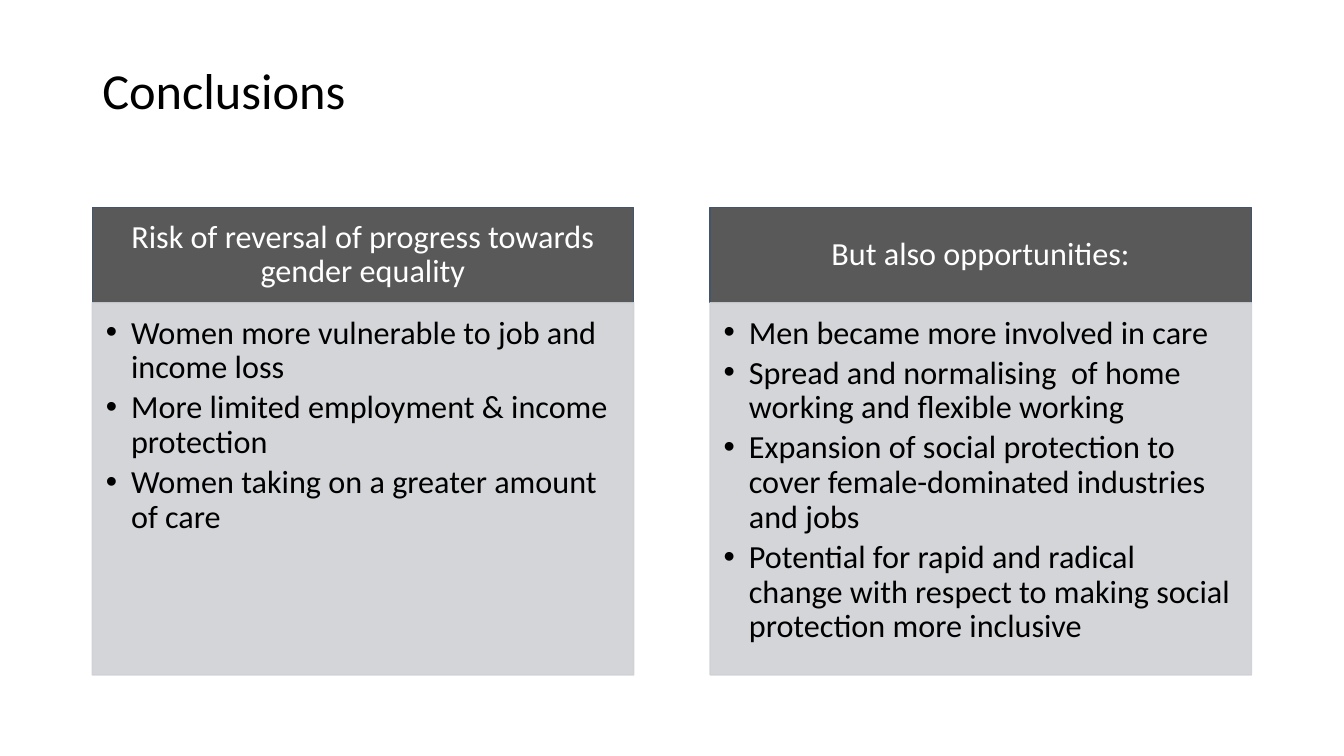
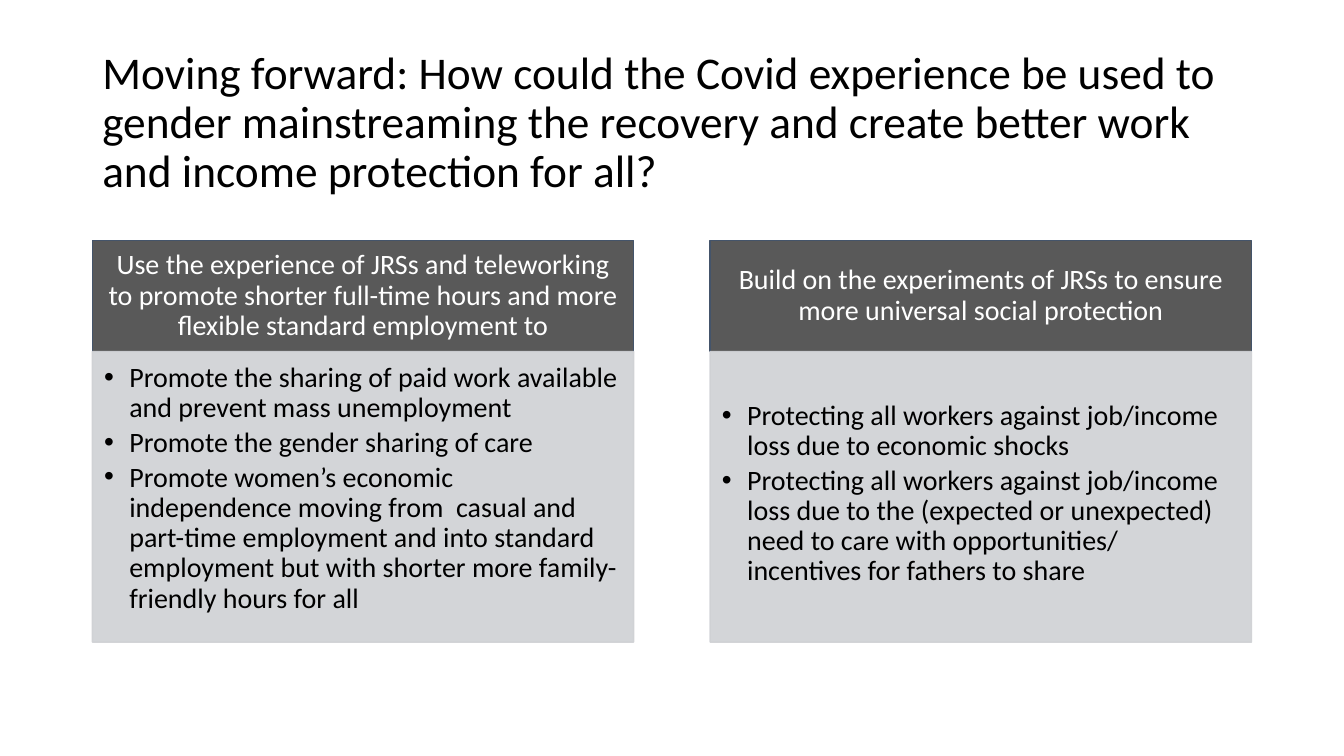
from lxml import etree
from pptx import Presentation
from pptx.dml.color import RGBColor
from pptx.enum.shapes import MSO_SHAPE
from pptx.enum.text import MSO_ANCHOR, PP_ALIGN
from pptx.oxml.ns import qn
from pptx.util import Inches, Pt

RECT = MSO_SHAPE.RECTANGLE
TOP, MIDDLE = MSO_ANCHOR.TOP, MSO_ANCHOR.MIDDLE
LEFT, CENTER = PP_ALIGN.LEFT, PP_ALIGN.CENTER

FONT = "Calibri"
COLORS = {"text": "000000", "header": "595959", "header_line": "44546A",
          "header_text": "FFFFFF", "body": "CFD1D4"}

# Grid of 160 columns by 90 rows, each cell a twelfth of an inch.
CELL = Inches(1) // 12
COLS, ROWS = 160, 90
MARGIN, CONTENT_COLS, PANEL_GAP = 11, 138, 9.1
TITLE_TOP, TITLE_ROWS = 7.3, 14.9

SLIDES = [
    {
        "title": "Conclusions", "title_size": 36, "title_anchor": TOP,
        "size": 23, "top": 24.7, "header_rows": 11.35, "body_rows": 44.3,
        "panels": [
            ("Risk of reversal of progress towards gender equality", 0, [
                "Women more vulnerable to job and income loss",
                "More limited employment & income protection",
                "Women taking on a greater amount of care",
            ]),
            ("But also opportunities:", 0, [
                "Men became more involved in care",
                "Spread and normalising  of home working and flexible working",
                "Expansion of social protection to cover female-dominated "
                "industries and jobs",
                "Potential for rapid and radical change with respect to making "
                "social protection more inclusive",
            ]),
        ],
    },
    {
        "title": "Moving forward: How could the Covid experience be used to "
                 "gender mainstreaming the recovery and create better work and "
                 "income protection for all?",
        "title_size": 32.4, "title_anchor": MIDDLE,
        "size": 20, "top": 28.6, "header_rows": 13.25, "body_rows": 34.6,
        "panels": [
            ("Use the experience of JRSs and teleworking to promote shorter "
             "full-time hours and more flexible standard employment to", 0, [
                 "Promote the sharing of paid work available and prevent mass "
                 "unemployment",
                 "Promote the gender sharing of care",
                 "Promote women’s economic independence moving from  casual and "
                 "part-time employment and into standard employment but with "
                 "shorter more family-friendly hours for all",
             ]),
            ("Build on the experiments of JRSs to ensure more universal social "
             "protection", 1.35, [
                 "Protecting all workers against job/income loss due to "
                 "economic shocks",
                 "Protecting all workers against job/income loss due to the "
                 "(expected or unexpected) need to care with opportunities/ "
                 "incentives for fathers to share",
             ]),
        ],
    },
]


class Deck:
    """Holds the presentation, its style and the slide being built."""

    def __init__(self):
        self.prs = Presentation()
        self.prs.slide_width = COLS * CELL
        self.prs.slide_height = ROWS * CELL
        self.slide = None

    def new_slide(self):
        self.slide = self.prs.slides.add_slide(self.prs.slide_layouts[6])

    def place(self, *cells):
        return [int(n * CELL) for n in cells]

    def set_text(self, s, lines, size, color, align=LEFT, anchor=TOP,
                 insets=None):
        """Fill s with one paragraph a line; insets are in ems, from the left."""
        tf = s.text_frame
        tf.word_wrap = True
        tf.vertical_anchor = anchor
        if insets:
            (tf.margin_left, tf.margin_top,
             tf.margin_right, tf.margin_bottom) = [Pt(size * n) for n in insets]
        tf.text = "\n".join(lines)
        for p in tf.paragraphs:
            p.alignment = align
            p.line_spacing = 0.9
            for r in p.runs:
                r.font.name = FONT
                r.font.size = Pt(size)
                r.font.color.rgb = RGBColor.from_string(COLORS[color])
        return tf

    def title(self, text, size, anchor):
        s = self.slide.shapes.add_textbox(
            *self.place(MARGIN, TITLE_TOP, CONTENT_COLS, TITLE_ROWS))
        self.set_text(s, [text], size, "text", anchor=anchor)

    def box(self, at, fill, line, opacity=100):
        s = self.slide.shapes.add_shape(RECT, *self.place(*at))
        s.shadow.inherit = False
        s.line.width = Pt(1)
        s.fill.solid()
        s.fill.fore_color.rgb = RGBColor.from_string(COLORS[fill])
        s.line.color.rgb = RGBColor.from_string(COLORS[line])
        if opacity < 100:
            for clr in s._element.spPr.iter(qn("a:srgbClr")):
                etree.SubElement(clr, qn("a:alpha"), val=str(opacity * 1000))
        return s

    def header(self, at, text, size):
        s = self.box(at, "header", "header_line")
        self.set_text(s, [text], size, "header_text", CENTER, MIDDLE,
                      (0.56, 0.31, 0.56, 0.31))

    def bullets(self, at, items, size, drop):
        """Bulleted body; drop lowers the list by that many ems."""
        s = self.box(at, "body", "body", opacity=90)
        tf = self.set_text(s, items, size, "text",
                           insets=(0.42, 0.42 + drop, 0.56, 0.63))
        for p in tf.paragraphs:
            p.space_after = Pt(round(size * 0.16, 1))
            pPr = p._p.get_or_add_pPr()
            pPr.set("marL", str(Inches(0.25)))
            pPr.set("indent", str(-Inches(0.25)))
            etree.SubElement(pPr, qn("a:buFont"), typeface="Arial")
            etree.SubElement(pPr, qn("a:buChar"), char="•")

    def panels(self, panels, size, top, header_rows, body_rows):
        """Equal panels side by side, each a header above a bulleted body."""
        n = len(panels)
        width = (CONTENT_COLS - PANEL_GAP * (n - 1)) / n
        for i, (heading, drop, items) in enumerate(panels):
            left = MARGIN + i * (width + PANEL_GAP)
            self.header((left, top, width, header_rows), heading, size)
            self.bullets((left, top + header_rows, width, body_rows),
                         items, size, drop)


def main():
    deck = Deck()
    for c in SLIDES:
        deck.new_slide()
        deck.title(c["title"], c["title_size"], c["title_anchor"])
        deck.panels(c["panels"], c["size"], c["top"],
                    c["header_rows"], c["body_rows"])
    deck.prs.save("out.pptx")


if __name__ == "__main__":
    main()
